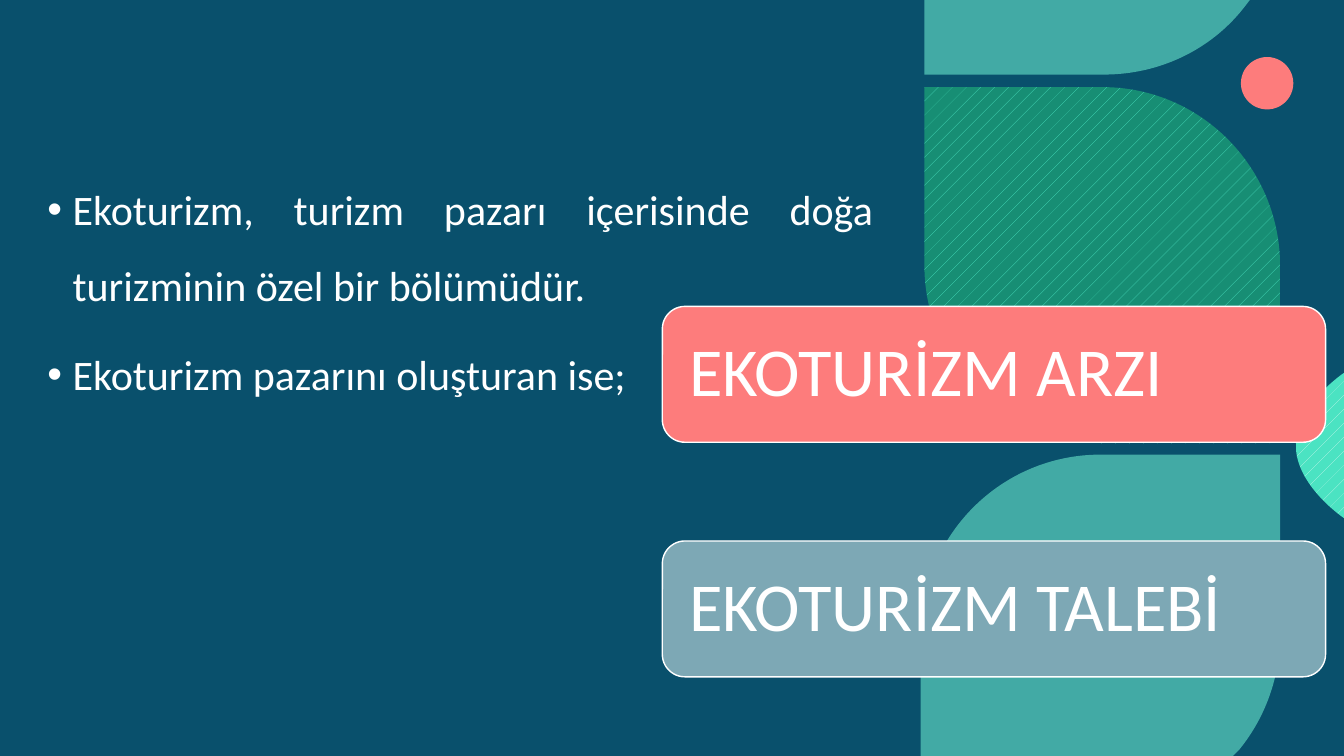
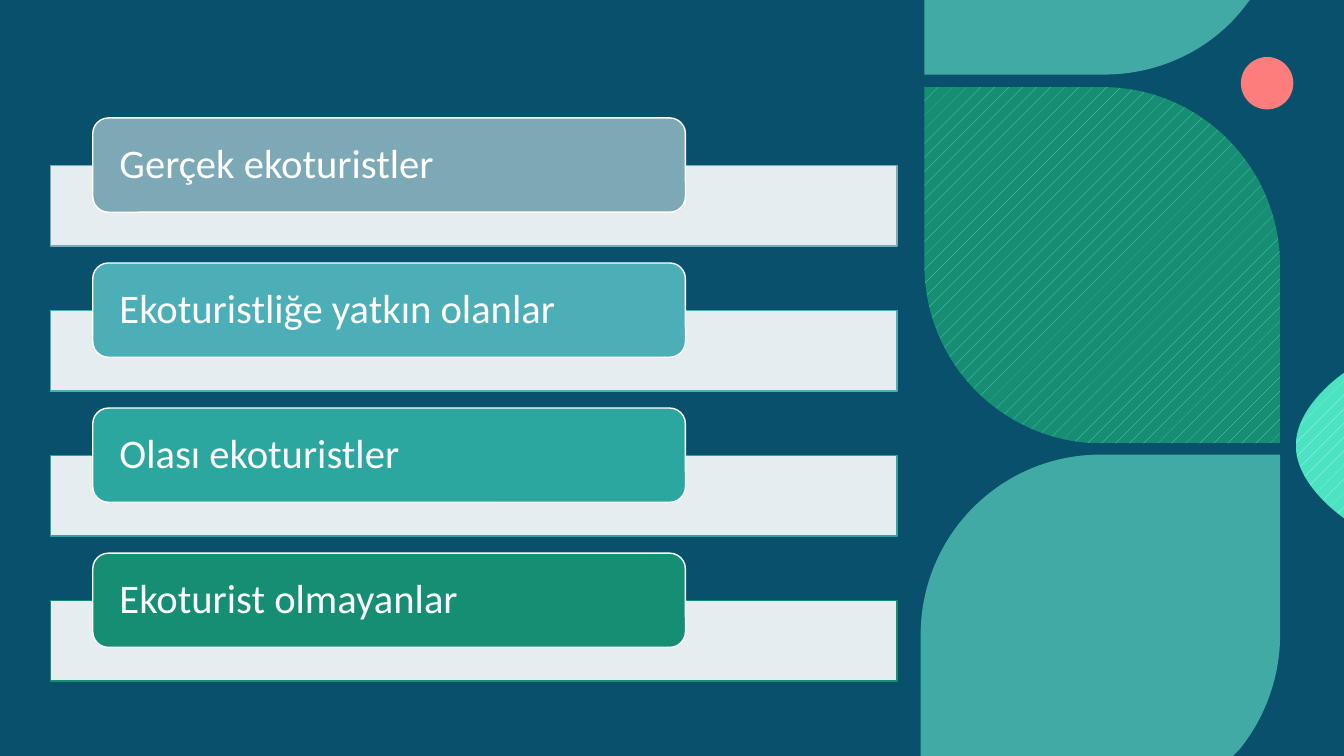
"""Build two slides on the ecotourism market over one shared leaf backdrop."""
from dataclasses import dataclass

from lxml import etree
from pptx import Presentation
from pptx.dml.color import RGBColor
from pptx.enum.dml import MSO_PATTERN
from pptx.enum.shapes import MSO_SHAPE
from pptx.enum.text import MSO_ANCHOR, MSO_AUTO_SIZE, PP_ALIGN
from pptx.oxml.ns import qn
from pptx.util import Inches, Pt

RECTANGLE = MSO_SHAPE.RECTANGLE
ROUNDED = MSO_SHAPE.ROUNDED_RECTANGLE
OVAL = MSO_SHAPE.OVAL
DOTTED = MSO_PATTERN.PERCENT_5
MIDDLE = MSO_ANCHOR.MIDDLE
LEFT = PP_ALIGN.LEFT
JUSTIFY = PP_ALIGN.JUSTIFY
FIXED = MSO_AUTO_SIZE.NONE


@dataclass(frozen=True)
class Theme:
    font: str = "Calibri"
    navy: str = "002060"
    veil: str = "18997E"
    coral: str = "FD7C7C"
    mint: str = "69E7CC"
    aqua: str = "4BE3C2"
    pale: str = "C3F6EB"
    leaf: str = "178E74"
    white: str = "FFFFFF"
    slate: str = "7DA8B5"
    lagoon: str = "4CAEB7"
    teal: str = "2CA79F"
    green: str = "168E74"
    body_size: int = 30
    panel_size: int = 49
    pill_size: int = 29


theme = Theme()
deck = Presentation()
deck.slide_width, deck.slide_height = Inches(13.333), Inches(7.5)
column, row = deck.slide_width / 100, deck.slide_height / 100


def paint(shape, fill, line=None, opacity=100, pattern=None):
    shape.shadow.inherit = False
    if pattern:
        shape.fill.patterned()
        shape.fill.pattern = DOTTED
        shape.fill.fore_color.rgb = RGBColor.from_string(pattern)
        shape.fill.back_color.rgb = RGBColor.from_string(fill)
    else:
        shape.fill.solid()
        shape.fill.fore_color.rgb = RGBColor.from_string(fill)
    if opacity < 100:
        color = shape.element.spPr.find(qn("a:solidFill"))[0]
        etree.SubElement(color, qn("a:alpha"), val=str(opacity * 1000))
    if line:
        shape.line.color.rgb = RGBColor.from_string(line)
        shape.line.width = Pt(1)
    else:
        shape.line.fill.background()


def add_block(page, kind, left, top, width, height, text="", size=0, inset=(0, 0)):
    block = page.shapes.add_shape(
        kind, int(left * column), int(top * row), int(width * column), int(height * row))
    if text:
        frame = block.text_frame
        frame.text = text
        frame.word_wrap = True
        frame.vertical_anchor = MIDDLE
        frame.margin_left = frame.margin_right = Inches(inset[0])
        frame.margin_top = frame.margin_bottom = Inches(inset[1])
        para = frame.paragraphs[0]
        para.alignment = LEFT
        para.line_spacing = 0.9
        para.font.name, para.font.size = theme.font, Pt(size)
        para.font.color.rgb = RGBColor.from_string(theme.white)
    return block


master = deck.slide_master
master.background.fill.solid()
master.background.fill.fore_color.rgb = RGBColor.from_string(theme.navy)

market_page = deck.slides.add_slide(deck.slide_layouts[1])
title = market_page.shapes.title
title.element.getparent().remove(title.element)

veil = add_block(market_page, RECTANGLE, 0, 0, 100, 100)
paint(veil, theme.veil, opacity=40)
dot = add_block(market_page, OVAL, 92.33, 7.55, 3.9, 6.93)
paint(dot, theme.coral)
backdrop = [veil, dot]

top_leaf = [
    (68.78, 0), (93, 0), (92.48, 1.2),
    (90.08, 6.53, 86.33, 9.87, 82.13, 9.87), (68.78, 9.87)]
bottom_leaf = [
    (81.9, 60.13), (95.25, 60.13), (95.25, 83.87),
    (95.25, 89.6, 94.13, 94.93, 92.25, 99.07), (91.73, 100), (68.5, 100),
    (68.5, 84), (68.5, 70.8, 74.48, 60.13, 81.9, 60.13)]
edge_leaf = [
    (100, 49.33), (100, 68.53),
    (100, 68.53, 96.42, 64.27, 96.42, 58.93),
    (96.42, 53.6, 100, 49.33, 100, 49.33)]
middle_leaf = [
    (95.25, 58.67), (82.05, 58.67),
    (74.7, 58.67, 68.78, 48.13, 68.78, 35.07), (68.78, 11.53), (82.05, 11.53),
    (89.33, 11.53, 95.25, 22.13, 95.25, 35.2)]

for outline, fill, opacity, pattern in [
    (top_leaf, theme.mint, 60, None),
    (bottom_leaf, theme.mint, 60, None),
    (edge_leaf, theme.aqua, 100, theme.pale),
    (middle_leaf, theme.leaf, 100, theme.aqua),
]:
    corners = [(int(step[i] * column), int(step[i + 1] * row))
               for step in outline for i in range(0, len(step), 2)]
    builder = market_page.shapes.build_freeform(*corners[0])
    builder.add_line_segments(corners[1:], close=True)
    petal = builder.convert_to_shape()
    segments = iter(list(petal.element.iter(qn("a:lnTo"))))
    for step in outline[1:]:
        segment = next(segments)
        if len(step) == 6:
            segment.tag = qn("a:cubicBezTo")
            for extra in (next(segments), next(segments)):
                segment.append(extra[0])
                extra.getparent().remove(extra)
    paint(petal, fill, opacity=opacity, pattern=pattern)
    backdrop.append(petal)

for shape in backdrop:
    master.shapes.element.append(shape.element)

body = market_page.placeholders[1]
body.left, body.top = int(2.78 * column), int(20.27 * row)
body.width, body.height = int(63 * column), int(59.47 * row)
frame = body.text_frame
frame.auto_size = FIXED
frame.text = (
    "Ekoturizm, turizm pazarı içerisinde doğa turizminin özel bir bölümüdür.\n"
    "Ekoturizm pazarını oluşturan ise;")
for index, para in enumerate(frame.paragraphs):
    properties = para._p.get_or_add_pPr()
    properties.set("marL", str(Inches(0.25)))
    properties.set("indent", str(-Inches(0.25)))
    etree.SubElement(properties, qn("a:buFont"), typeface="Arial")
    etree.SubElement(properties, qn("a:buChar"), char="•")
    para.alignment = JUSTIFY
    para.line_spacing = 1.5
    para.space_before = Pt(10 if index else 0)
    para.font.name, para.font.size = theme.font, Pt(theme.body_size)
    para.font.color.rgb = RGBColor.from_string(theme.white)

for index, (text, color) in enumerate([
    ("EKOTURİZM ARZI", theme.coral),
    ("EKOTURİZM TALEBİ", theme.slate),
]):
    panel = add_block(market_page, ROUNDED, 49.28, 40.53 + index * 31.03, 49.35, 17.97,
                      text, theme.panel_size, (0.2, 0.2))
    paint(panel, color, theme.white)

tourist_page = deck.slides.add_slide(deck.slide_layouts[6])
bar_left, bar_width = 3.75, 63
for index, (text, color) in enumerate([
    ("Gerçek ekoturistler", theme.slate),
    ("Ekoturistliğe yatkın olanlar", theme.lagoon),
    ("Olası ekoturistler", theme.teal),
    ("Ekoturist olmayanlar", theme.green),
]):
    pill_top = 15.6 + index * 19.19
    bar = add_block(tourist_page, RECTANGLE, bar_left, pill_top + 6.27, bar_width, 10.67)
    paint(bar, theme.white, color, opacity=90)
    pill = add_block(tourist_page, ROUNDED, bar_left + bar_width * 0.05, pill_top,
                     bar_width * 0.7, 12.47, text, theme.pill_size, (0.22, 0))
    paint(pill, color, theme.white)

deck.save("out.pptx")
